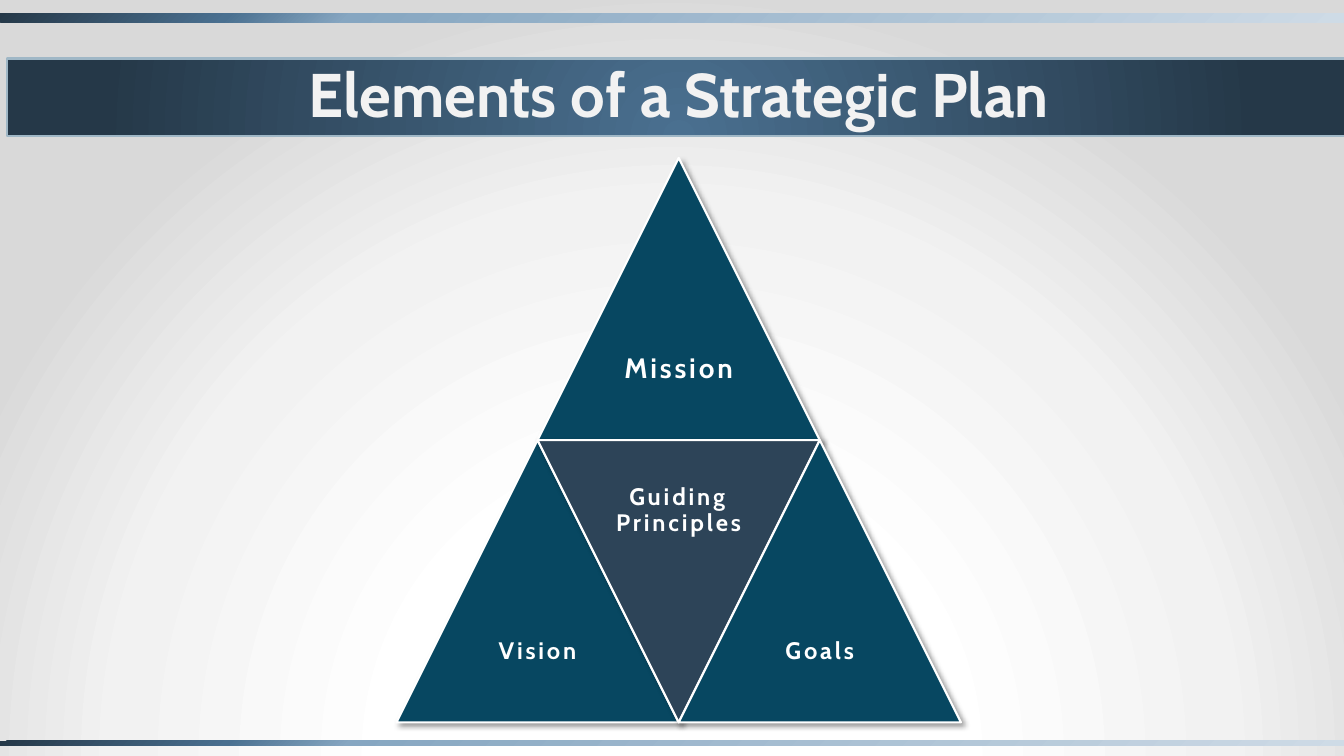
import pptx
import pptx.util
import pptx.oxml
import pptx.oxml.ns
import pptx.dml.color
import pptx.enum.shapes
import pptx.enum.text
import lxml.etree

Pt = pptx.util.Pt
RGBColor = pptx.dml.color.RGBColor
qn = pptx.oxml.ns.qn

WHITE = RGBColor(0xFF, 0xFF, 0xFF)
PALE = RGBColor(0xF2, 0xF2, 0xF2)
GREY = RGBColor(0xD9, 0xD9, 0xD9)
ICE = RGBColor(0xCE, 0xDB, 0xE6)
SKY = RGBColor(0x86, 0xA6, 0xC1)
STEEL = RGBColor(0x4A, 0x70, 0x90)
NAVY = RGBColor(0x25, 0x38, 0x48)
TITLE_EDGE = RGBColor(0x9F, 0xB7, 0xC6)
TEAL = RGBColor(0x07, 0x47, 0x61)
SLATE = RGBColor(0x2D, 0x44, 0x58)
BLACK = RGBColor(0, 0, 0)

BELOW_CENTRE = dict(l=50, t=130, r=50, b=-30)
BOTTOM_RIGHT = dict(l=100, t=100, r=0, b=0)


def radial_gradient(fill, parent, stops, focus):
    fill.gradient()
    gradient = parent.find(qn("a:gradFill"))
    for child in list(gradient):
        gradient.remove(child)
    stop_list = lxml.etree.SubElement(gradient, qn("a:gsLst"))
    for position, color in stops:
        stop = lxml.etree.SubElement(stop_list, qn("a:gs"), pos=str(position * 1000))
        lxml.etree.SubElement(stop, qn("a:srgbClr"), val=str(color))
    circle = lxml.etree.SubElement(gradient, qn("a:path"), path="circle")
    lxml.etree.SubElement(circle, qn("a:fillToRect"),
                          {side: str(share * 1000) for side, share in focus.items()})


def write_centred(frame, text, inset, font_format):
    frame_format = dict(word_wrap=True, vertical_anchor=pptx.enum.text.MSO_ANCHOR.MIDDLE,
                        margin_left=inset, margin_right=inset,
                        margin_top=inset, margin_bottom=inset)
    for attribute, value in frame_format.items():
        setattr(frame, attribute, value)
    paragraph = frame.paragraphs[0]
    paragraph.alignment = pptx.enum.text.PP_ALIGN.CENTER
    paragraph.line_spacing = 0.9
    run = paragraph.add_run()
    run.text = text
    for attribute, value in font_format.items():
        setattr(run.font, attribute, value)
    return run


deck = pptx.Presentation()
deck.slide_width, deck.slide_height = Pt(960), Pt(540)
slide = deck.slides.add_slide(deck.slide_layouts[5])

backdrop = slide.background.fill
backdrop.gradient()
radial_gradient(backdrop, slide.element.find(".//" + qn("p:bgPr")),
                [(35, WHITE), (72, PALE), (100, GREY)], BELOW_CENTRE)

for top, width, height in [(9.5, 960, 6.5), (529, 962.5, 3.8)]:
    band = slide.shapes.add_shape(pptx.enum.shapes.MSO_SHAPE.RECTANGLE,
                                  Pt(0), Pt(top), Pt(width), Pt(height))
    band.shadow.inherit = False
    band.line.fill.background()
    radial_gradient(band.fill, band.element.spPr,
                    [(0, ICE), (74, SKY), (83, STEEL), (100, NAVY)], BOTTOM_RIGHT)

title = slide.shapes.title
title_place = dict(left=Pt(5), top=Pt(41.8), width=Pt(960), height=Pt(55.4))
for attribute, value in title_place.items():
    setattr(title, attribute, value)
radial_gradient(title.fill, title.element.spPr,
                [(0, STEEL), (86, NAVY), (100, NAVY)], BELOW_CENTRE)
title.line.color.rgb = TITLE_EDGE
title.line.width = Pt(2)
heading = write_centred(title.text_frame, "Elements of a Strategic Plan", Pt(3.6),
                        dict(name="Cabin", size=Pt(44), bold=True))
title.text_frame.auto_size = pptx.enum.text.MSO_AUTO_SIZE.NONE
radial_gradient(heading.font.fill, heading.font._element,
                [(9, WHITE), (64, PALE), (100, PALE)], BOTTOM_RIGHT)

SIDE = 201.6
HALF = SIDE / 2
PYRAMID_LEFT, PYRAMID_TOP = 283.2, 112.8
elements = [
    ("Mission", 1, 0, TEAL, 20, 0),
    ("Vision", 0, 1, TEAL, 17, 0),
    ("Guiding Principles", 1, 1, SLATE, 17, 180),
    ("Goals", 2, 1, TEAL, 17, 0),
]
pyramid = slide.shapes.add_group_shape()
for name, column, row, color, size, turn in elements:
    left = PYRAMID_LEFT + column * HALF
    top = PYRAMID_TOP + row * SIDE
    triangle = pyramid.shapes.add_shape(pptx.enum.shapes.MSO_SHAPE.ISOSCELES_TRIANGLE,
                                        Pt(left), Pt(top), Pt(SIDE), Pt(SIDE))
    triangle.rotation = turn
    triangle.fill.solid()
    triangle.fill.fore_color.rgb = color
    triangle.line.color.rgb = WHITE
    triangle.line.width = Pt(1.5)
    triangle.shadow.inherit = False
    effects = triangle.element.spPr.find(qn("a:effectLst"))
    shadow = lxml.etree.SubElement(effects, qn("a:outerShdw"), blurRad=str(Pt(4)),
                                   dist=str(Pt(3)), dir="2700000", algn="tl",
                                   rotWithShape="0")
    shade = lxml.etree.SubElement(shadow, qn("a:srgbClr"), val=str(BLACK))
    lxml.etree.SubElement(shade, qn("a:alpha"), val="40000")

    label_top = top if turn else top + HALF
    label = pyramid.shapes.add_textbox(Pt(left + HALF / 2), Pt(label_top), Pt(HALF), Pt(HALF))
    caption = write_centred(label.text_frame, name, Pt(5),
                            dict(name="Cabin", size=Pt(size), bold=True))
    caption.font.color.rgb = WHITE
    caption.font._element.set("spc", "200")

deck.save("out.pptx")
